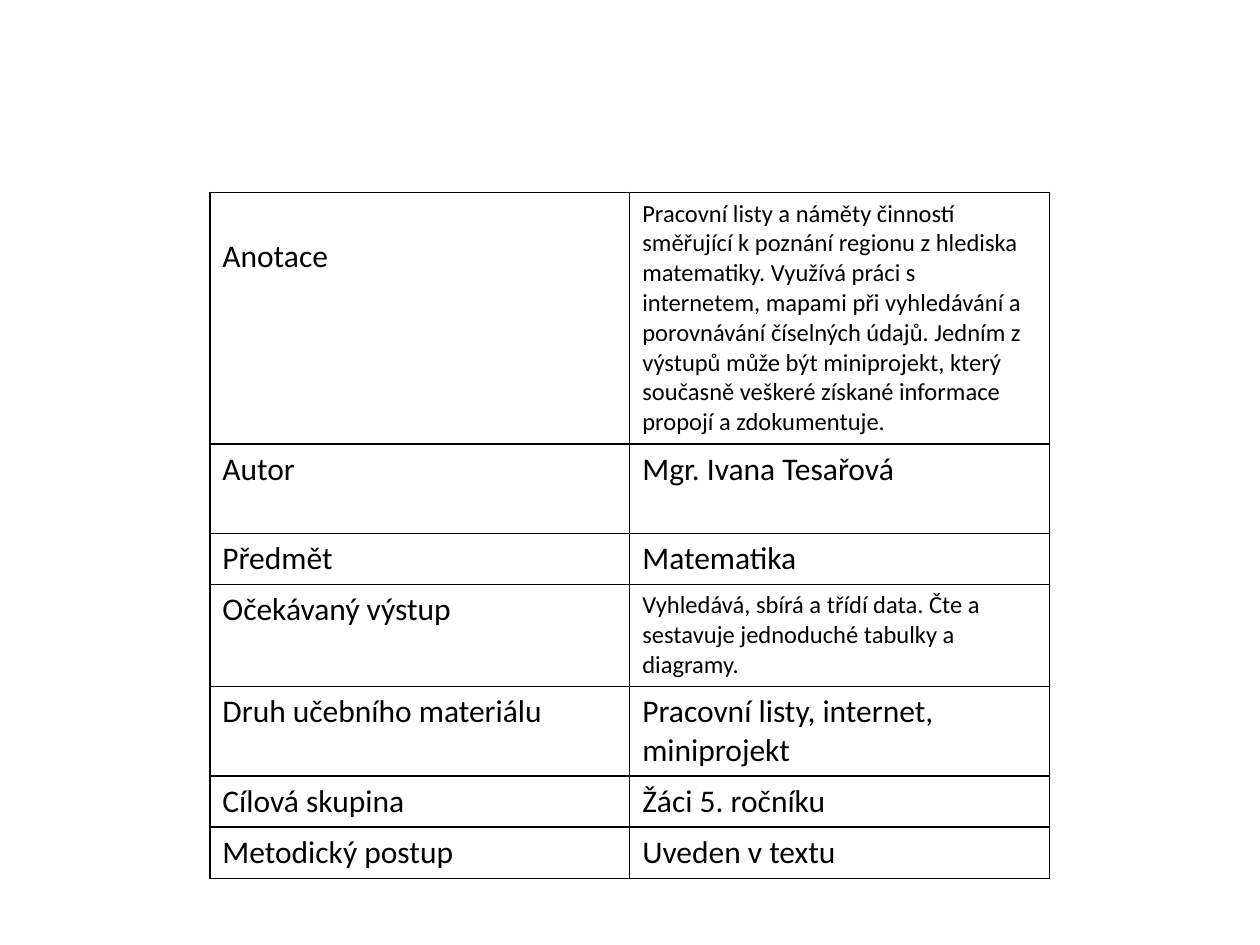
import pptx
import pptx.dml.color
import pptx.oxml
import pptx.oxml.ns
import pptx.util
from dataclasses import dataclass

Cm, Pt = pptx.util.Cm, pptx.util.Pt


@dataclass(frozen=True)
class Theme:
    font: str = "Calibri"
    ink: str = "000000"
    normal: int = 18
    small: int = 14
    border: float = 1


THEME = Theme()

# label, value, value size, row height in cm
ROWS = [
    ("Anotace",
     "Pracovní listy a náměty činností směřující k poznání regionu z hlediska "
     "matematiky. Využívá práci s internetem, mapami při vyhledávání a "
     "porovnávání číselných údajů. Jedním z výstupů může být miniprojekt, "
     "který současně veškeré získané informace propojí a zdokumentuje.",
     THEME.small, 5.07),
    ("Autor", "Mgr. Ivana Tesařová", THEME.normal, 1.8),
    ("Předmět", "Matematika", THEME.normal, 1.03),
    ("Očekávaný výstup",
     "Vyhledává, sbírá a třídí data. Čte a sestavuje jednoduché tabulky a "
     "diagramy.",
     THEME.small, 2.06),
    ("Druh učebního materiálu", "Pracovní listy, internet, miniprojekt",
     THEME.normal, 1.8),
    ("Cílová skupina", "Žáci 5. ročníku", THEME.normal, 1.03),
    ("Metodický postup", "Uveden v textu", THEME.normal, 1.03),
]


def set_borders(cell):
    tc_pr = cell._tc.get_or_add_tcPr()
    for side in ("lnL", "lnR", "lnT", "lnB"):
        tc_pr.append(pptx.oxml.parse_xml(
            f'<a:{side} {pptx.oxml.ns.nsdecls("a")} w="{Pt(THEME.border)}">'
            f'<a:solidFill><a:srgbClr val="{THEME.ink}"/></a:solidFill>'
            f'</a:{side}>'))


def fill_cell(cell, text, size):
    set_borders(cell)
    cell.fill.background()
    p = cell.text_frame.paragraphs[0]
    r = p.add_run()
    r.text = text
    for name, value in {"name": THEME.font, "size": Pt(size), "bold": False}.items():
        setattr(r.font, name, value)
    r.font.color.rgb = pptx.dml.color.RGBColor.from_string(THEME.ink)


def add_info_table(slide):
    height = sum(row[-1] for row in ROWS)
    frame = slide.shapes.add_table(
        len(ROWS), 2, Cm(4.23), Cm(3.88), Cm(16.93), Cm(height))
    table = frame.table
    for name, value in {"first_row": False, "horz_banding": False}.items():
        setattr(table, name, value)
    for i, (label, value, size, row_height) in enumerate(ROWS):
        table.rows[i].height = Cm(row_height)
        fill_cell(table.cell(i, 0), label, THEME.normal)
        fill_cell(table.cell(i, 1), value, size)
    table.cell(0, 0).margin_top = Cm(0.9)


def main():
    prs = pptx.Presentation()
    prs.slide_width, prs.slide_height = Cm(25.4), Cm(19.05)
    slide = prs.slides.add_slide(prs.slide_layouts[6])
    add_info_table(slide)
    prs.save("out.pptx")


if __name__ == "__main__":
    main()
